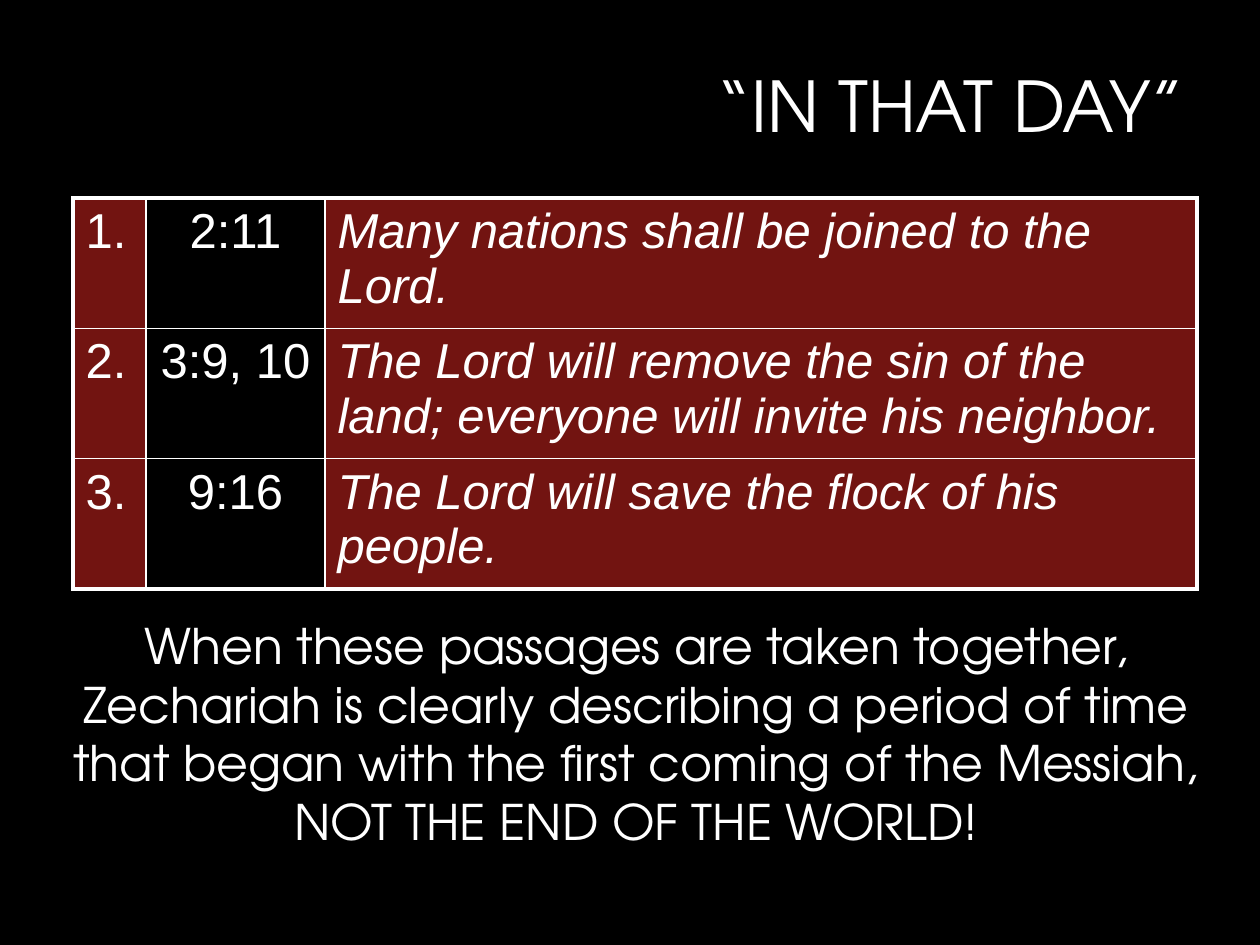
from lxml.etree import SubElement
from pptx import Presentation
from pptx.dml.color import RGBColor
from pptx.enum.text import MSO_ANCHOR as Anchor, PP_ALIGN as Align
from pptx.oxml import parse_xml
from pptx.oxml.ns import nsdecls, qn
from pptx.util import Pt

EMU_PER_PX = 914400 / 126
BLACK, WHITE, RED = "000000", "FFFFFF", "721411"
DISPLAY_FONT, TABLE_FONT = "TeX Gyre Adventor", "Arial"
OUTER_WIDTH, INNER_WIDTH = 2.25, 1

TITLE = "“IN THAT DAY”"
PASSAGES = [
    ("1.", "2:11", "Many nations shall be joined to the Lord."),
    ("2.", "3:9, 10", "The Lord will remove the sin of the land; everyone will invite his neighbor."),
    ("3.", "9:16", "The Lord will save the flock of his people."),
]
CONCLUSION = (
    "When these passages are taken together, Zechariah is clearly describing "
    "a period of time that began with the first coming of the Messiah, "
    "NOT THE END OF THE WORLD!"
)
COLUMNS = [
    (73, RED, Align.LEFT, False),
    (179, None, Align.CENTER, False),
    (872, RED, Align.LEFT, True),
]
ROW_HEIGHT = 130


def px(length):
    return round(length * EMU_PER_PX)


def color(value):
    return RGBColor.from_string(value)


def write(text_frame, text, size, font_name, align, italic=False):
    text_frame.text = text
    paragraph = text_frame.paragraphs[0]
    paragraph.alignment = align
    font = paragraph.runs[0].font
    font.size = Pt(size)
    font.name = font_name
    font.italic = italic
    font.color.rgb = color(WHITE)
    return paragraph


def add_text(slide, box, text, size, align, anchor):
    shape = slide.shapes.add_textbox(*map(px, box))
    shape.text_frame.word_wrap = True
    shape.text_frame.vertical_anchor = anchor
    return write(shape.text_frame, text, size, DISPLAY_FONT, align)


def set_borders(cell, widths):
    properties = cell._tc.get_or_add_tcPr()
    for position, (side, width) in enumerate(widths.items()):
        line = parse_xml(f'<a:ln{side} {nsdecls("a")} w="{Pt(width)}"/>')
        fill = SubElement(line, qn("a:solidFill"))
        SubElement(fill, qn("a:srgbClr"), val=WHITE)
        properties.insert(position, line)


def add_passages(slide, left, top):
    row_count, column_count = len(PASSAGES), len(COLUMNS)
    width = sum(column[0] for column in COLUMNS)
    frame = slide.shapes.add_table(
        row_count, column_count, px(left), px(top), px(width), px(ROW_HEIGHT * row_count)
    )
    table = frame.table
    table.first_row = table.horz_banding = False
    for column, (column_width, *_) in zip(table.columns, COLUMNS):
        column.width = px(column_width)
    for r, passage in enumerate(PASSAGES):
        table.rows[r].height = px(ROW_HEIGHT)
        for c, (text, (_, fill, align, italic)) in enumerate(zip(passage, COLUMNS)):
            cell = table.cell(r, c)
            write(cell.text_frame, text, 28, TABLE_FONT, align, italic)
            if fill:
                cell.fill.solid()
                cell.fill.fore_color.rgb = color(fill)
            else:
                cell.fill.background()
            on_edge = {"L": c == 0, "R": c == column_count - 1, "T": r == 0, "B": r == row_count - 1}
            set_borders(cell, {side: OUTER_WIDTH if edge else INNER_WIDTH for side, edge in on_edge.items()})


def main():
    presentation = Presentation()
    presentation.slide_width, presentation.slide_height = px(1260), px(945)
    slide = presentation.slides.add_slide(presentation.slide_layouts[6])
    slide.background.fill.solid()
    slide.background.fill.fore_color.rgb = color(BLACK)

    title = add_text(slide, (73, 53, 1124, 113), TITLE, 40, Align.RIGHT, Anchor.MIDDLE)
    title.line_spacing = 0.9
    add_passages(slide, 73, 198)
    add_text(slide, (48, 609, 1176, 251), CONCLUSION, 28, Align.CENTER, Anchor.TOP)
    presentation.save("out.pptx")


if __name__ == "__main__":
    main()
